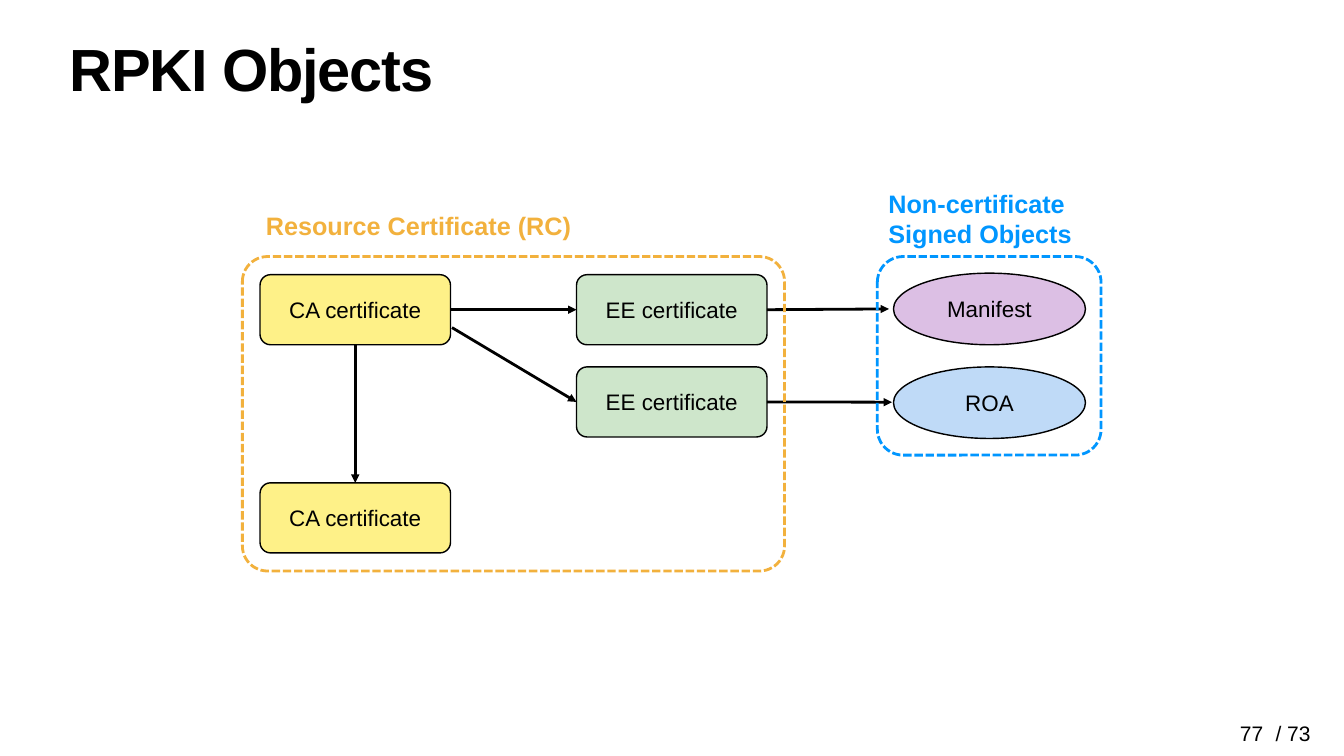
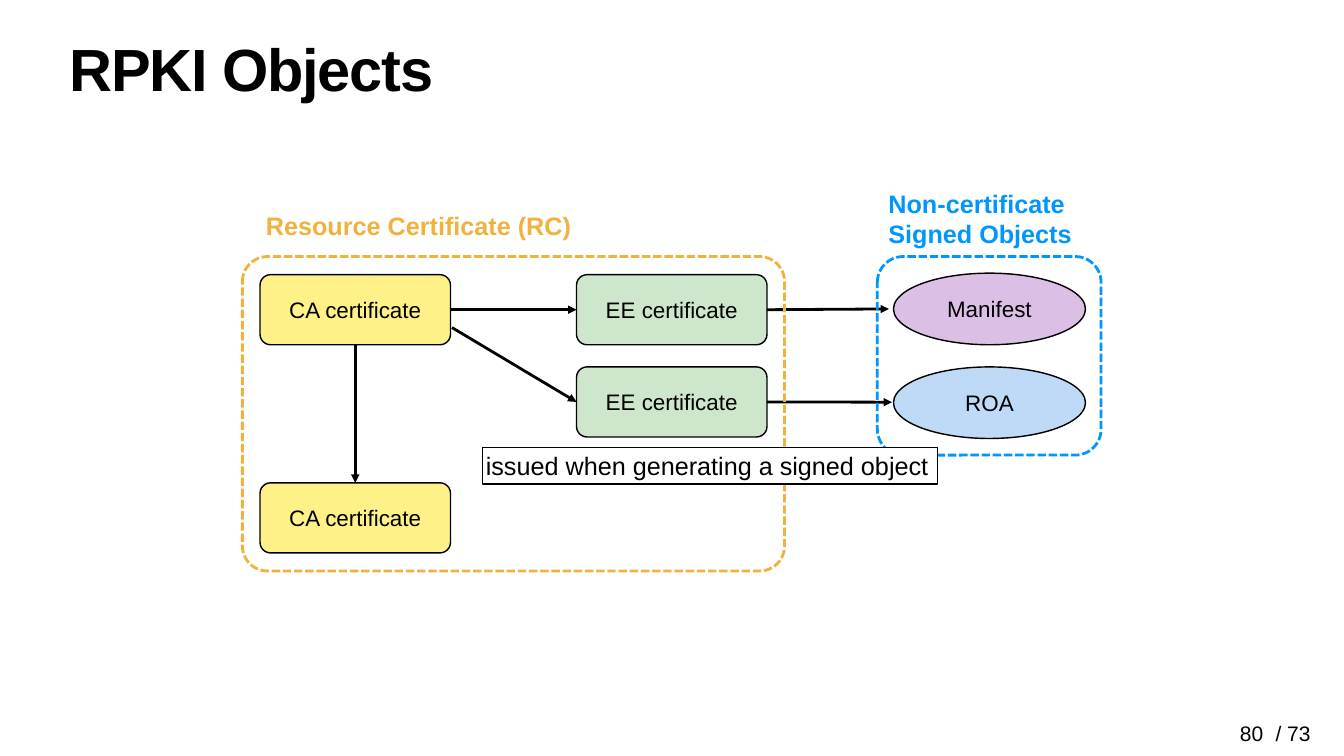
import pptx
import pptx.dml.color
import pptx.enum.dml
import pptx.enum.shapes
import pptx.enum.text
import pptx.oxml
import pptx.oxml.ns
import pptx.util

Inches = pptx.util.Inches
Pt = pptx.util.Pt
RGBColor = pptx.dml.color.RGBColor
Shape = pptx.enum.shapes.MSO_SHAPE
Anchor = pptx.enum.text.MSO_ANCHOR
Align = pptx.enum.text.PP_ALIGN
AutoSize = pptx.enum.text.MSO_AUTO_SIZE

COLORS = {
    "black": "000000",
    "white": "FFFFFF",
    "ca": "FEF188",
    "ee": "CEE6CB",
    "manifest": "DCBFE4",
    "roa": "BFDAF7",
    "resource": "F2B13D",
    "signed": "0096FF",
}
FONT = "Arial"
BOX_WIDTH, BOX_HEIGHT = 3.78, 1.39
CA_LEFT, EE_LEFT = 5.16, 11.44
TOP_ROW, MIDDLE_ROW, BOTTOM_ROW = 5.45, 7.28, 9.58

NODES = {
    "ca_parent": ("CA certificate", "ca", Shape.ROUNDED_RECTANGLE, CA_LEFT, TOP_ROW, BOX_WIDTH, BOX_HEIGHT),
    "ee_manifest": ("EE certificate", "ee", Shape.ROUNDED_RECTANGLE, EE_LEFT, TOP_ROW, BOX_WIDTH, BOX_HEIGHT),
    "manifest": ("Manifest", "manifest", Shape.OVAL, 17.73, 5.42, 3.81, 1.42),
    "ca_child": ("CA certificate", "ca", Shape.ROUNDED_RECTANGLE, CA_LEFT, BOTTOM_ROW, BOX_WIDTH, BOX_HEIGHT),
    "roa": ("ROA", "roa", Shape.OVAL, 17.73, 7.28, 3.81, 1.42),
    "ee_roa": ("EE certificate", "ee", Shape.ROUNDED_RECTANGLE, EE_LEFT, MIDDLE_ROW, BOX_WIDTH, BOX_HEIGHT),
}
ARROWS = [
    ((15.2, 6.13), (17.64, 6.13), ("ee_manifest", 3), None),
    ((8.97, 6.13), (11.41, 6.13), ("ca_parent", 3), ("ee_manifest", 1)),
    ((7.05, 6.81), (7.05, 9.61), ("ca_parent", 2), ("ca_child", 0)),
    ((8.97, 6.5), (11.43, 7.89), None, ("ee_roa", 1)),
    ((15.25, 7.98), (17.7, 7.98), ("ee_roa", 3), None),
]
FRAMES = [
    ("resource", 0.08, (4.81, 5.09, 10.76, 6.24)),
    ("signed", 0.13, (17.41, 5.09, 4.44, 3.94)),
]
LABELS = [
    (["Resource Certificate (RC)"], "resource", (5.2, 4.11, 6.21, 0.71)),
    (["Non-certificate ", "Signed Objects"], "signed", (17.52, 3.67, 3.86, 1.32)),
]
SLIDES = [("77", True, None), ("80", False, "issued when generating a signed object")]


def write(shape, lines, size, color="black", bold=False, align=Align.CENTER, anchor=Anchor.MIDDLE, grow=False):
    frame = shape.text_frame
    frame.margin_left = frame.margin_right = frame.margin_top = frame.margin_bottom = Inches(0.06)
    frame.word_wrap = not grow
    frame.auto_size = AutoSize.SHAPE_TO_FIT_TEXT if grow else AutoSize.NONE
    frame.vertical_anchor = anchor
    for index, line in enumerate(lines):
        paragraph = frame.add_paragraph() if index else frame.paragraphs[0]
        paragraph.alignment = align
        run = paragraph.add_run()
        run.text = line
        run.font.name = FONT
        run.font.size = Pt(size)
        run.font.bold = bold
        run.font.color.rgb = RGBColor.from_string(COLORS[color])


def add_box(shapes, kind, bounds, fill, line, width):
    shape = shapes.add_shape(kind, *map(Inches, bounds))
    shape.shadow.inherit = False
    if fill:
        shape.fill.solid()
        shape.fill.fore_color.rgb = RGBColor.from_string(COLORS[fill])
    else:
        shape.fill.background()
    shape.line.color.rgb = RGBColor.from_string(COLORS[line])
    shape.line.width = Pt(width)
    return shape


presentation = pptx.Presentation()
presentation.slide_width = Inches(26.67)
presentation.slide_height = Inches(15)

for number, grouped, note in SLIDES:
    slide = presentation.slides.add_slide(presentation.slide_layouts[5])

    title = slide.shapes.title
    title.left, title.top, title.width, title.height = map(Inches, (1.32, 0.84, 24.03, 2.25))
    write(title, ["RPKI Objects"], 85, bold=True, align=Align.LEFT, anchor=Anchor.TOP)
    title_paragraph = title.text_frame.paragraphs[0]
    title_paragraph.line_spacing = 0.8
    title_paragraph.runs[0].font._element.set("spc", "-170")

    for text, left, width in [("/ 73", 25.24, 0.84), (number, 24.54, 0.59)]:
        footer = slide.shapes.add_textbox(*map(Inches, (left, 14.26, width, 0.6)))
        write(footer, [text], 30, anchor=Anchor.BOTTOM, grow=True)

    diagram = slide.shapes.add_group_shape().shapes if grouped else slide.shapes

    nodes = {}
    for name, (text, fill, kind, *bounds) in NODES.items():
        node = add_box(diagram, kind, bounds, fill, "black", 2)
        if kind == Shape.ROUNDED_RECTANGLE:
            node.adjustments[0] = 0.15
        write(node, [text], 32)
        nodes[name] = node

    for start, end, source, target in ARROWS:
        arrow = diagram.add_connector(pptx.enum.shapes.MSO_CONNECTOR.STRAIGHT, *map(Inches, start + end))
        if source:
            arrow.begin_connect(nodes[source[0]], source[1])
        if target:
            arrow.end_connect(nodes[target[0]], target[1])
        arrow.line.color.rgb = RGBColor.from_string(COLORS["black"])
        arrow.line.width = Pt(4)
        head = pptx.oxml.parse_xml(f'<a:tailEnd {pptx.oxml.ns.nsdecls("a")} type="triangle"/>')
        arrow.line._get_or_add_ln().append(head)
        effects = pptx.oxml.parse_xml(f'<a:effectLst {pptx.oxml.ns.nsdecls("a")}/>')
        arrow._element.spPr.append(effects)

    for color, radius, bounds in FRAMES:
        frame = add_box(diagram, Shape.ROUNDED_RECTANGLE, bounds, None, color, 4)
        frame.adjustments[0] = radius
        frame.line.dash_style = pptx.enum.dml.MSO_LINE.SQUARE_DOT

    for lines, color, bounds in LABELS:
        label = diagram.add_textbox(*map(Inches, bounds))
        write(label, lines, 36, color, bold=True, grow=True)

    if note:
        callout = add_box(slide.shapes, Shape.RECTANGLE, (9.58, 8.88, 9.02, 0.72), "white", "black", 2)
        write(callout, [note], 36, align=Align.LEFT, grow=True)

presentation.save("out.pptx")
